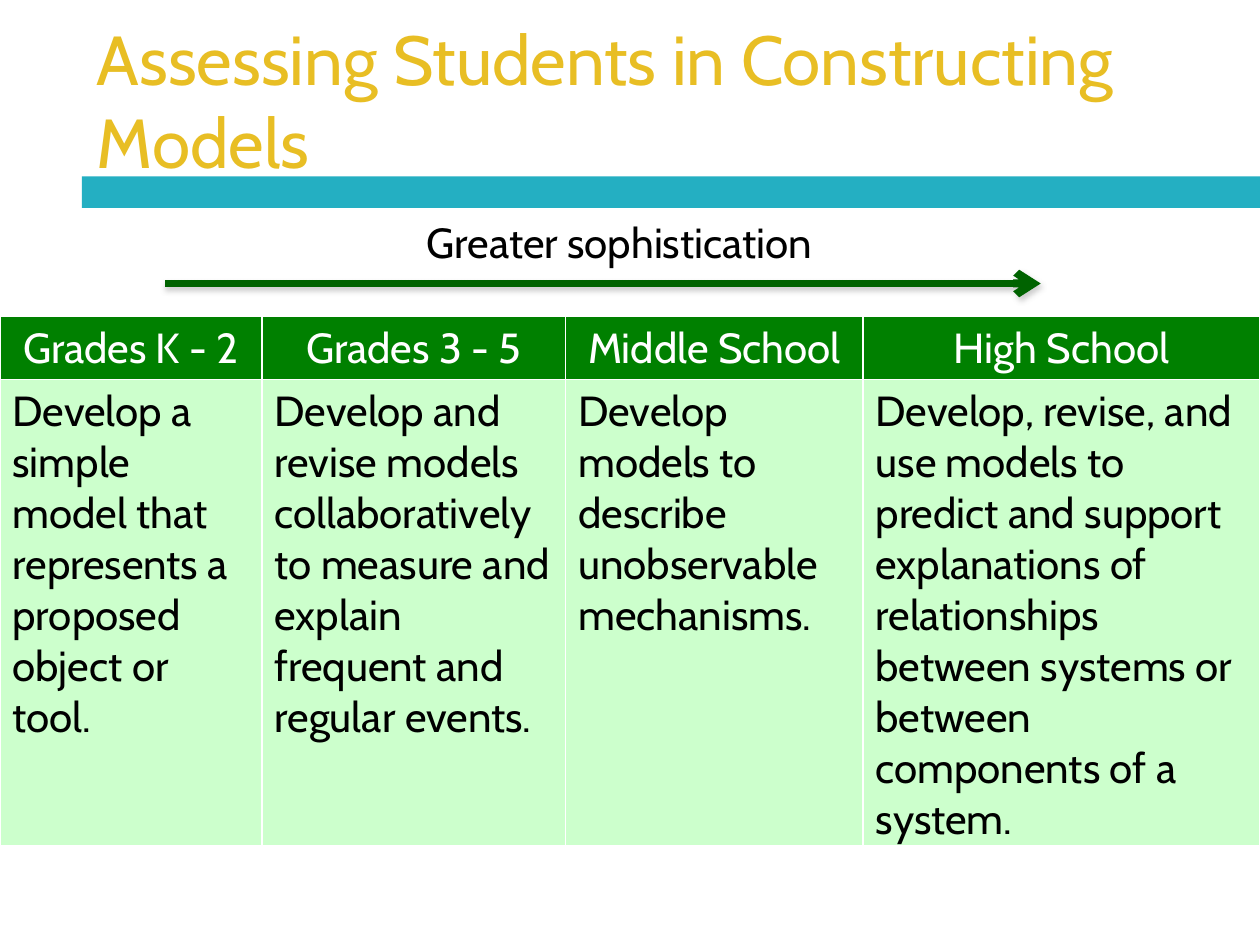
from lxml import etree
from pptx import Presentation
from pptx.dml.color import RGBColor
from pptx.enum.shapes import MSO_CONNECTOR, MSO_SHAPE
from pptx.enum.text import MSO_ANCHOR, PP_ALIGN
from pptx.oxml import parse_xml
from pptx.oxml.ns import nsdecls
from pptx.util import Inches, Pt


def rgb(value):
    return RGBColor.from_string(value)


def write(tf, text, size, color, align=PP_ALIGN.LEFT):
    tf.word_wrap = True
    p = tf.paragraphs[0]
    p.text = text
    p.alignment = align
    for name, value in {"name": "Cabin", "size": Pt(size)}.items():
        setattr(p.font, name, value)
    p.font.color.rgb = rgb(color)


prs = Presentation()
prs.slide_width, prs.slide_height = Inches(10), Inches(7.5)
s = prs.slides.add_slide(prs.slide_layouts[6])

# Title band
for left, width, color in [(0, 0.58, "FFFFFF"), (0.65, 9.35, "24AFC2")]:
    sp = s.shapes.add_shape(MSO_SHAPE.RECTANGLE, Inches(left), Inches(1.4),
                            Inches(width), Inches(0.25))
    sp.shadow.inherit = False
    sp.fill.solid()
    sp.fill.fore_color.rgb = rgb(color)
    sp.line.fill.background()

title = s.shapes.add_textbox(Inches(0.67), Inches(0.25), Inches(8.92), Inches(1.08))
title.text_frame.vertical_anchor = MSO_ANCHOR.MIDDLE
write(title.text_frame, "Assessing Students in Constructing \vModels", 39.6, "E8BE24")

# Grade table
columns = [
    (2.08, "Grades K - 2",
     "Develop a simple model that represents a proposed object or tool."),
    (2.41, "Grades 3 - 5",
     "Develop and revise models collaboratively to measure and explain "
     "frequent and regular events."),
    (2.36, "Middle School",
     "Develop models to describe unobservable mechanisms."),
    (3.15, "High School",
     "Develop, revise, and use models to predict and support explanations of "
     "relationships between systems or between components of a system."),
]
row_styles = [
    ("008000", "FFFFFF", PP_ALIGN.CENTER),
    ("CCFFCC", "000000", PP_ALIGN.LEFT),
]
table = s.shapes.add_table(2, 4, Inches(0), Inches(2.51), Inches(10), Inches(3.99)).table
for row, height in zip(table.rows, (0.47, 3.52)):
    row.height = Inches(height)
for c, (width, *texts) in enumerate(columns):
    table.columns[c].width = Inches(width)
    for r, (text, (fill, color, align)) in enumerate(zip(texts, row_styles)):
        cell = table.cell(r, c)
        write(cell.text_frame, text, 24, color, align)
        tc_pr = cell._tc.get_or_add_tcPr()
        for side in ("lnL", "lnR", "lnT", "lnB"):
            tc_pr.append(parse_xml(
                f'<a:{side} {nsdecls("a")} w="12700"><a:solidFill>'
                f'<a:srgbClr val="FFFFFF"/></a:solidFill></a:{side}>'))
        cell.fill.solid()
        cell.fill.fore_color.rgb = rgb(fill)

# Sophistication arrow
label = s.shapes.add_textbox(Inches(3.29), Inches(1.67), Inches(5.71), Inches(0.51))
write(label.text_frame, "Greater sophistication", 24, "000000")

arrow = s.shapes.add_connector(MSO_CONNECTOR.STRAIGHT, Inches(1.31), Inches(2.25),
                               Inches(8.26), Inches(2.25))
arrow.line.color.rgb = rgb("006300")
arrow.line.width = Pt(4.5)
ln = arrow.line._get_or_add_ln()
etree.SubElement(ln, ln.tag.replace("}ln", "}tailEnd"), type="arrow")
arrow._element.spPr.append(parse_xml(
    f'<a:effectLst {nsdecls("a")}><a:outerShdw blurRad="{Pt(3.1)}" dist="{Pt(1.6)}" '
    'dir="5400000" rotWithShape="0"><a:srgbClr val="808080"><a:alpha val="38000"/>'
    '</a:srgbClr></a:outerShdw></a:effectLst>'))

prs.save("out.pptx")
